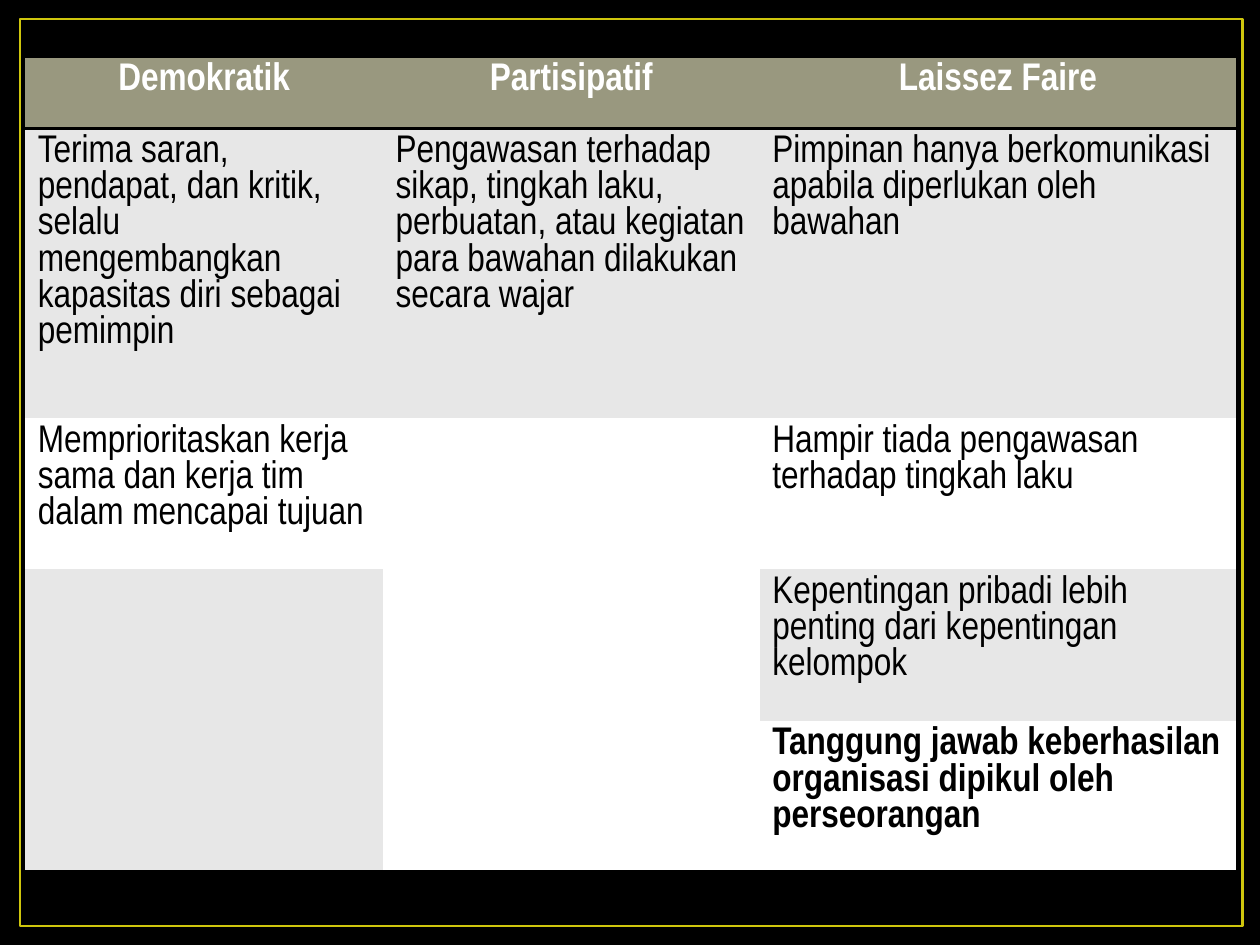
from dataclasses import dataclass

from lxml.etree import SubElement
from pptx import Presentation
from pptx.dml.color import RGBColor
from pptx.enum.shapes import MSO_SHAPE
from pptx.enum.text import PP_ALIGN
from pptx.oxml import parse_xml
from pptx.oxml.ns import nsdecls, qn
from pptx.util import Inches, Pt


@dataclass(frozen=True)
class Theme:
    back: str = "000000"
    frame: str = "CFC60D"
    head: str = "99987F"
    band: str = "E7E7E7"
    plain: str = "FFFFFF"
    ink: str = "000000"
    light: str = "FFFFFF"
    font: str = "Arial Narrow"
    size: int = 22


THEME = Theme()
NO_GRID = "{2D5ABB26-0587-4C30-8999-92F81FD0307C}"
WIDTHS = [2.84, 2.99, 3.78]
HEIGHTS = [0.57, 2.3, 1.2, 1.2, 1.2]
ROWS = [
    ["Demokratik", "Partisipatif", "Laissez Faire"],
    [
        "Terima saran, pendapat, dan kritik, selalu mengembangkan kapasitas diri sebagai pemimpin",
        "Pengawasan terhadap sikap, tingkah laku, perbuatan, atau kegiatan para bawahan dilakukan secara wajar",
        "Pimpinan hanya berkomunikasi apabila diperlukan oleh bawahan",
    ],
    [
        "Memprioritaskan kerja sama dan kerja tim dalam mencapai tujuan",
        "",
        "Hampir tiada pengawasan terhadap tingkah laku",
    ],
    ["", "", "Kepentingan pribadi lebih penting dari kepentingan kelompok"],
    ["", "", "Tanggung jawab keberhasilan organisasi dipikul oleh perseorangan"],
]
SPANS = [(2, 1), (3, 0)]
LAST = len(ROWS) - 1


def color(code):
    return RGBColor.from_string(code)


def add_frame(slide):
    frame = slide.shapes.add_shape(
        MSO_SHAPE.RECTANGLE, Inches(0.16), Inches(0.15), Inches(9.7), Inches(7.2)
    )
    frame.shadow.inherit = False
    frame.fill.background()
    frame.line.color.rgb = color(THEME.frame)
    frame.line.width = Pt(1.5)


def add_rule(cell, side):
    line = parse_xml(f'<a:{side} {nsdecls("a")} w="{Pt(2)}"/>')
    fill = SubElement(line, qn("a:solidFill"))
    SubElement(fill, qn("a:srgbClr"), val=THEME.back)
    cell._tc.get_or_add_tcPr().insert(0, line)


def add_text(cell, text, head, bold):
    para = cell.text_frame.paragraphs[0]
    para.alignment = PP_ALIGN.CENTER if head else PP_ALIGN.LEFT
    run = para.add_run()
    run.text = text
    run.font.name = THEME.font
    run.font.size = Pt(THEME.size)
    run.font.bold = bold
    run.font.color.rgb = color(THEME.light if head else THEME.ink)


def fill_cell(cell, text, row, tone):
    head = row == 0
    cell.margin_left = cell.margin_right = Inches(0.1)
    cell.margin_top = cell.margin_bottom = Inches(0.05)
    cell.fill.solid()
    cell.fill.fore_color.rgb = color(tone)
    if text:
        add_text(cell, text, head, row in (0, LAST))
    if row in (0, LAST) or cell.is_merge_origin:
        add_rule(cell, "lnB")
    if head:
        add_rule(cell, "lnT")


def add_grid(slide):
    grid = slide.shapes.add_table(
        len(ROWS), len(WIDTHS), Inches(0.2), Inches(0.45),
        Inches(sum(WIDTHS)), Inches(sum(HEIGHTS)),
    ).table
    grid._tbl.tblPr.find(qn("a:tableStyleId")).text = NO_GRID
    for col, width in zip(grid.columns, WIDTHS):
        col.width = Inches(width)
    for row, height in zip(grid.rows, HEIGHTS):
        row.height = Inches(height)
    starts = {col: row for row, col in SPANS}
    for row, col in SPANS:
        grid.cell(row, col).merge(grid.cell(LAST, col))
    for row, texts in enumerate(ROWS):
        for col, text in enumerate(texts):
            level = min(row, starts.get(col, row))
            tone = THEME.band if level % 2 else THEME.plain
            fill_cell(grid.cell(row, col), text, row, tone if row else THEME.head)


def main():
    deck = Presentation()
    deck.slide_width, deck.slide_height = Inches(10), Inches(7.5)
    slide = deck.slides.add_slide(deck.slide_layouts[6])
    slide.background.fill.solid()
    slide.background.fill.fore_color.rgb = color(THEME.back)
    add_frame(slide)
    add_grid(slide)
    deck.save("out.pptx")


if __name__ == "__main__":
    main()
